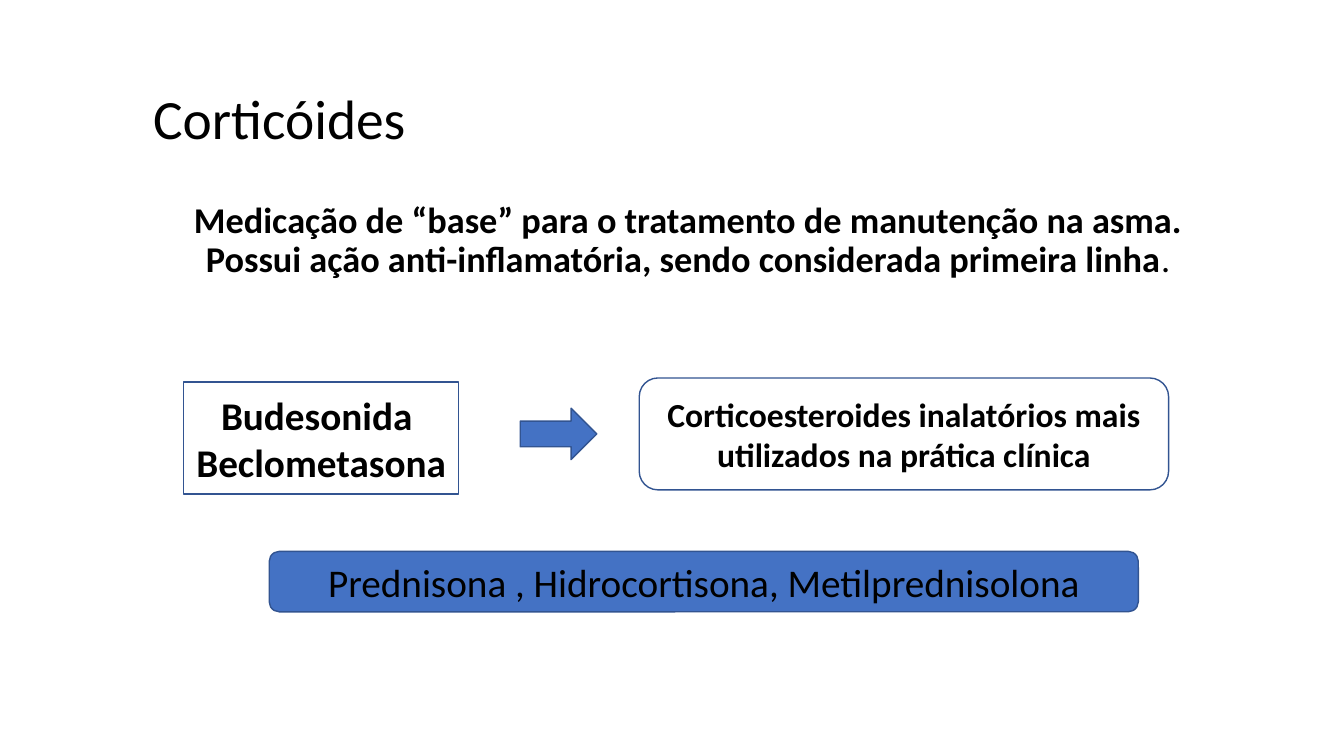
from pptx import Presentation
from pptx.dml.color import RGBColor
from pptx.enum.shapes import MSO_SHAPE
from pptx.enum.text import MSO_ANCHOR, PP_ALIGN
from pptx.util import Inches, Pt

RECT, ROUND, ARROW = MSO_SHAPE.RECTANGLE, MSO_SHAPE.ROUNDED_RECTANGLE, MSO_SHAPE.RIGHT_ARROW
TOP, MIDDLE, BOTTOM = MSO_ANCHOR.TOP, MSO_ANCHOR.MIDDLE, MSO_ANCHOR.BOTTOM
LEFT, CENTER = PP_ALIGN.LEFT, PP_ALIGN.CENTER

THEME = {
    "font": "Calibri",
    "text": RGBColor(0x00, 0x00, 0x00),
    "blue": RGBColor(0x44, 0x72, 0xC4),
    "outline": RGBColor(0x32, 0x54, 0x91),
    "line": Pt(1),
    "title": Pt(39.6),
    "lead": Pt(25.9),
    "drug": Pt(28),
    "note": Pt(24),
}

TITLE = [[("Corticóides", False)]]
LEAD = [[
    ("Medicação de “base” para o tratamento de manutenção na asma. "
     "Possui ação anti-inflamatória, sendo considerada primeira linha", True),
    (".", False),
]]
INHALED = [[("Budesonida ", True)], [("Beclometasona", True)]]
USAGE = [[("Corticoesteroides inalatórios mais utilizados na prática clínica", True)]]
SYSTEMIC = [[("Prednisona , Hidrocortisona, Metilprednisolona", False)]]

TEXTS = [
    ((1.42, 0.83, 10.51, 1.36), TITLE, "title", LEFT, TOP),
    ((1.57, 1.91, 10.51, 0.92), LEAD, "lead", CENTER, BOTTOM),
]
SHAPES = [
    (RECT, (1.82, 3.79, 2.73, 1.11), None, INHALED, "drug"),
    (ARROW, (5.16, 4.05, 0.76, 0.51), "blue", [], None),
    (ROUND, (6.34, 3.75, 5.25, 1.11), None, USAGE, "note"),
    (ROUND, (2.67, 5.47, 8.62, 0.6), "blue", SYSTEMIC, "drug"),
]


def write(tf, paragraphs, size, align, anchor, spacing=1.0):
    tf.word_wrap = True
    tf.vertical_anchor = anchor
    for i, runs in enumerate(paragraphs):
        p = tf.add_paragraph() if i else tf.paragraphs[0]
        p.alignment = align
        p.line_spacing = spacing
        for text, bold in runs:
            r = p.add_run()
            r.text = text
            r.font.name = THEME["font"]
            r.font.size = THEME[size]
            r.font.bold = bold
            r.font.color.rgb = THEME["text"]


prs = Presentation()
prs.slide_width, prs.slide_height = Inches(13.33), Inches(7.5)
s = prs.slides.add_slide(prs.slide_layouts[6])

for box, paragraphs, size, align, anchor in TEXTS:
    tf = s.shapes.add_textbox(*map(Inches, box)).text_frame
    tf.margin_top = Inches(0.08)
    write(tf, paragraphs, size, align, anchor, 0.9)

for kind, box, fill, paragraphs, size in SHAPES:
    sp = s.shapes.add_shape(kind, *map(Inches, box))
    sp.shadow.inherit = False
    sp.line.color.rgb = THEME["outline"]
    sp.line.width = THEME["line"]
    if fill:
        sp.fill.solid()
        sp.fill.fore_color.rgb = THEME[fill]
    else:
        sp.fill.background()
    if paragraphs:
        write(sp.text_frame, paragraphs, size, CENTER, MIDDLE)

prs.save("out.pptx")
